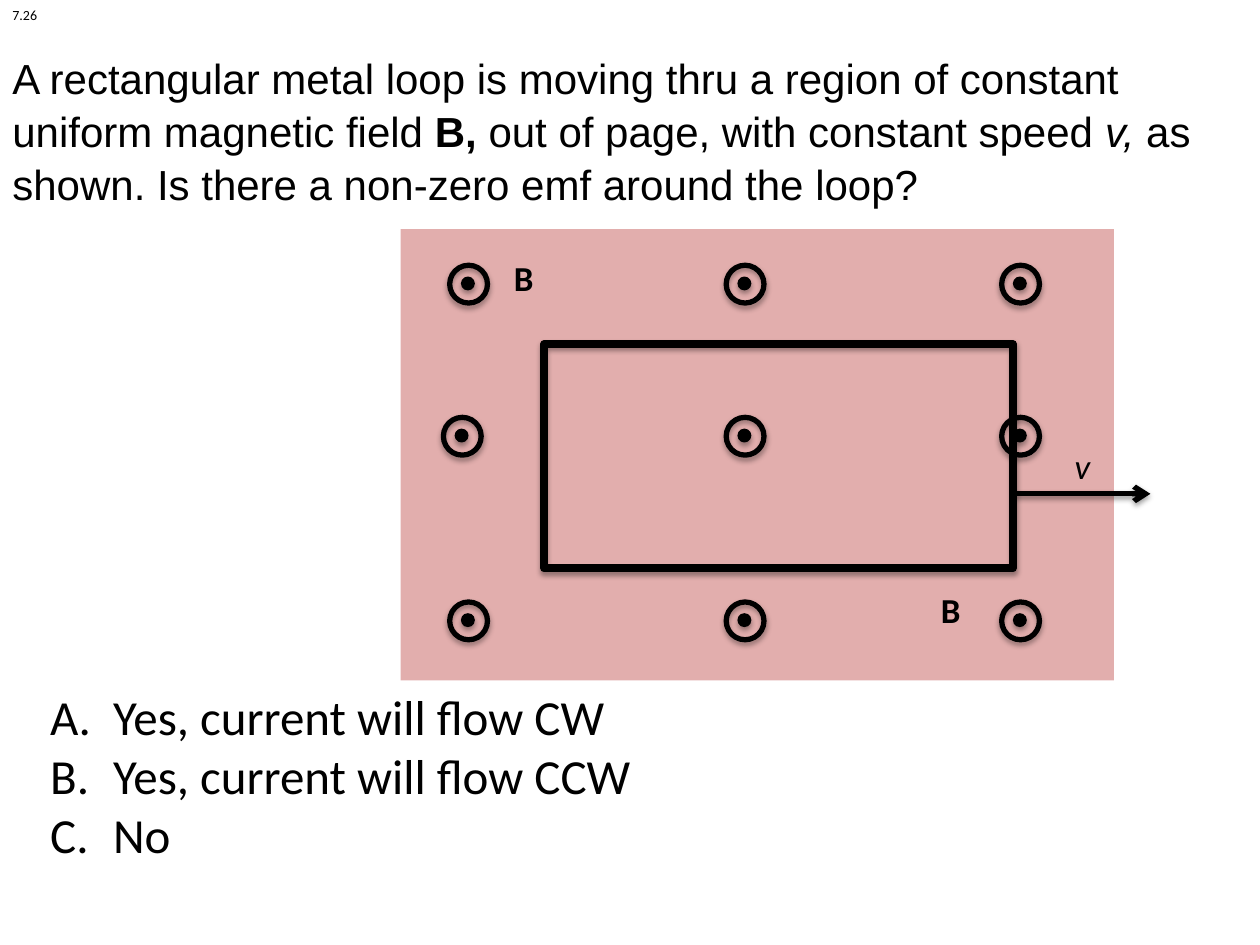
import dataclasses

import pptx
import pptx.dml.color
import pptx.enum.shapes
import pptx.enum.text
import pptx.oxml
import pptx.oxml.ns
import pptx.util

Pt = pptx.util.Pt
qn = pptx.oxml.ns.qn
SHAPES = pptx.enum.shapes.MSO_SHAPE
ANCHOR = pptx.enum.text.MSO_ANCHOR
AUTO_SIZE = pptx.enum.text.MSO_AUTO_SIZE


@dataclasses.dataclass(frozen=True)
class Theme:
    ink: str = "000000"
    field: str = "C0504D"
    field_alpha: int = 46
    question_font: str = "Arial"
    body_font: str = "Calibri"
    question_size: float = 24
    option_size: float = 28
    label_size: float = 20
    number_size: float = 8


THEME = Theme()


def rgb(value):
    return pptx.dml.color.RGBColor.from_string(value)


def add_xml(parent, tag, content="", **attributes):
    """Append one drawing element to parent."""
    attrs = " ".join(f'{name}="{value}"' for name, value in attributes.items())
    xml = f'<a:{tag} {pptx.oxml.ns.nsdecls("a")} {attrs}>{content}</a:{tag}>'
    parent.append(pptx.oxml.parse_xml(xml))


def add_shadow(shape, alpha=35, distance=1.8):
    """Soft shadow straight below; call after the line is set."""
    properties = shape.element.spPr
    effects = properties.find(qn("a:effectLst"))
    if effects is None:
        add_xml(properties, "effectLst")
        effects = properties.find(qn("a:effectLst"))
    colour = f'<a:srgbClr val="{THEME.ink}"><a:alpha val="{alpha * 1000}"/></a:srgbClr>'
    add_xml(effects, "outerShdw", colour, blurRad=Pt(3.1), dist=Pt(distance),
            dir=5400000, rotWithShape=0)


def add_figure(shapes, kind, box, fill=None, line_width=None):
    figure = shapes.add_shape(kind, *map(Pt, box))
    figure.shadow.inherit = False
    if fill:
        figure.fill.solid()
        figure.fill.fore_color.rgb = rgb(fill)
    else:
        figure.fill.background()
    if line_width:
        figure.line.color.rgb = rgb(THEME.ink)
        figure.line.width = Pt(line_width)
        add_shadow(figure)
    else:
        figure.line.fill.background()
    return figure


def add_run(paragraph, text, **font_format):
    run = paragraph.add_run()
    run.text = text
    for name, value in font_format.items():
        setattr(run.font, name, value)
    run.font.color.rgb = rgb(THEME.ink)


def add_text_frame(slide, box, **frame_format):
    frame = slide.shapes.add_textbox(*map(Pt, box)).text_frame
    for name, value in frame_format.items():
        setattr(frame, name, value)
    return frame


def add_label(slide, text, box, size=THEME.label_size, **font_format):
    frame = add_text_frame(slide, box, word_wrap=False,
                           auto_size=AUTO_SIZE.SHAPE_TO_FIT_TEXT)
    add_run(frame.paragraphs[0], text, name=THEME.body_font, size=Pt(size), **font_format)


def add_question(slide):
    frame = add_text_frame(slide, (0, 0, 720, 147.6), word_wrap=True,
                           vertical_anchor=ANCHOR.MIDDLE)
    question = frame.paragraphs[0]
    question.line_spacing = 1.06
    parts = (
        ("A rectangular metal loop is moving thru a region of constant "
         "uniform magnetic field ", {}),
        ("B,", {"bold": True}),
        (" out of page, with constant speed ", {}),
        ("v,", {"italic": True}),
        (" as shown. Is there a non-zero emf around the loop?", {}),
    )
    for text, emphasis in parts:
        add_run(question, text, name=THEME.question_font,
                size=Pt(THEME.question_size), **emphasis)


def add_field_mark(slide, left, top):
    """Ring with a dot: field pointing out of the page."""
    mark = slide.shapes.add_group_shape()
    add_figure(mark.shapes, SHAPES.OVAL, (left, top, 21.6, 21.6), line_width=3)
    add_figure(mark.shapes, SHAPES.OVAL, (left + 6.8, top + 6.8, 7.2, 7.2),
               fill=THEME.ink, line_width=0.75)


def add_velocity(slide, start, end):
    velocity = slide.shapes.add_connector(
        pptx.enum.shapes.MSO_CONNECTOR.STRAIGHT, *map(Pt, start + end))
    velocity.line.color.rgb = rgb(THEME.ink)
    velocity.line.width = Pt(3)
    add_xml(velocity.element.spPr.find(qn("a:ln")), "tailEnd", type="arrow")
    add_shadow(velocity, alpha=38, distance=1.6)


def add_options(slide, options, box):
    frame = add_text_frame(slide, box, word_wrap=True,
                           auto_size=AUTO_SIZE.SHAPE_TO_FIT_TEXT)
    for index, text in enumerate(options):
        option = frame.add_paragraph() if index else frame.paragraphs[0]
        add_run(option, text, name=THEME.body_font, size=Pt(THEME.option_size))
        properties = option._p.get_or_add_pPr()
        for name, value in {"marL": Pt(36), "indent": Pt(-36)}.items():
            properties.set(name, str(value))
        add_xml(properties, "buFont", typeface="+mj-lt")
        add_xml(properties, "buAutoNum", type="alphaUcPeriod")


def main():
    deck = pptx.Presentation()
    deck.slide_width, deck.slide_height = Pt(720), Pt(540)
    slide = deck.slides.add_slide(deck.slide_layouts[6])

    add_question(slide)

    # Magnetic field region
    region = add_figure(slide.shapes, SHAPES.RECTANGLE, (229, 131, 407.5, 257.8),
                        fill=THEME.field)
    region_colour = region.element.spPr.find(qn("a:solidFill"))[0]
    add_xml(region_colour, "alpha", val=THEME.field_alpha * 1000)

    # Field marks; the middle row starts slightly further left
    for top, first_left in ((151.6, 257), (238.5, 253.4), (344, 257)):
        for left in (first_left, 415, 572.4):
            add_field_mark(slide, left, top)
    for left, top in ((286.6, 143.3), (530.6, 332.6)):
        add_label(slide, "B", (left, top, 28.8, 31.7), bold=True)

    # Moving loop and its velocity
    add_figure(slide.shapes, SHAPES.RECTANGLE, (311, 196.6, 267.8, 128.2), line_width=4.5)
    add_velocity(slide, (579.6, 282.2), (657.4, 282.2))
    add_label(slide, "v", (607, 250.6, 29.5, 31.7), italic=True)

    # Answers and slide number
    add_options(slide, ("Yes, current will flow CW", "Yes, current will flow CCW", "No"),
                (21.6, 388.8, 393.1, 108.7))
    add_label(slide, "7.26", (0, 0, 28.8, 17.3), size=THEME.number_size)

    deck.save("out.pptx")


if __name__ == "__main__":
    main()
